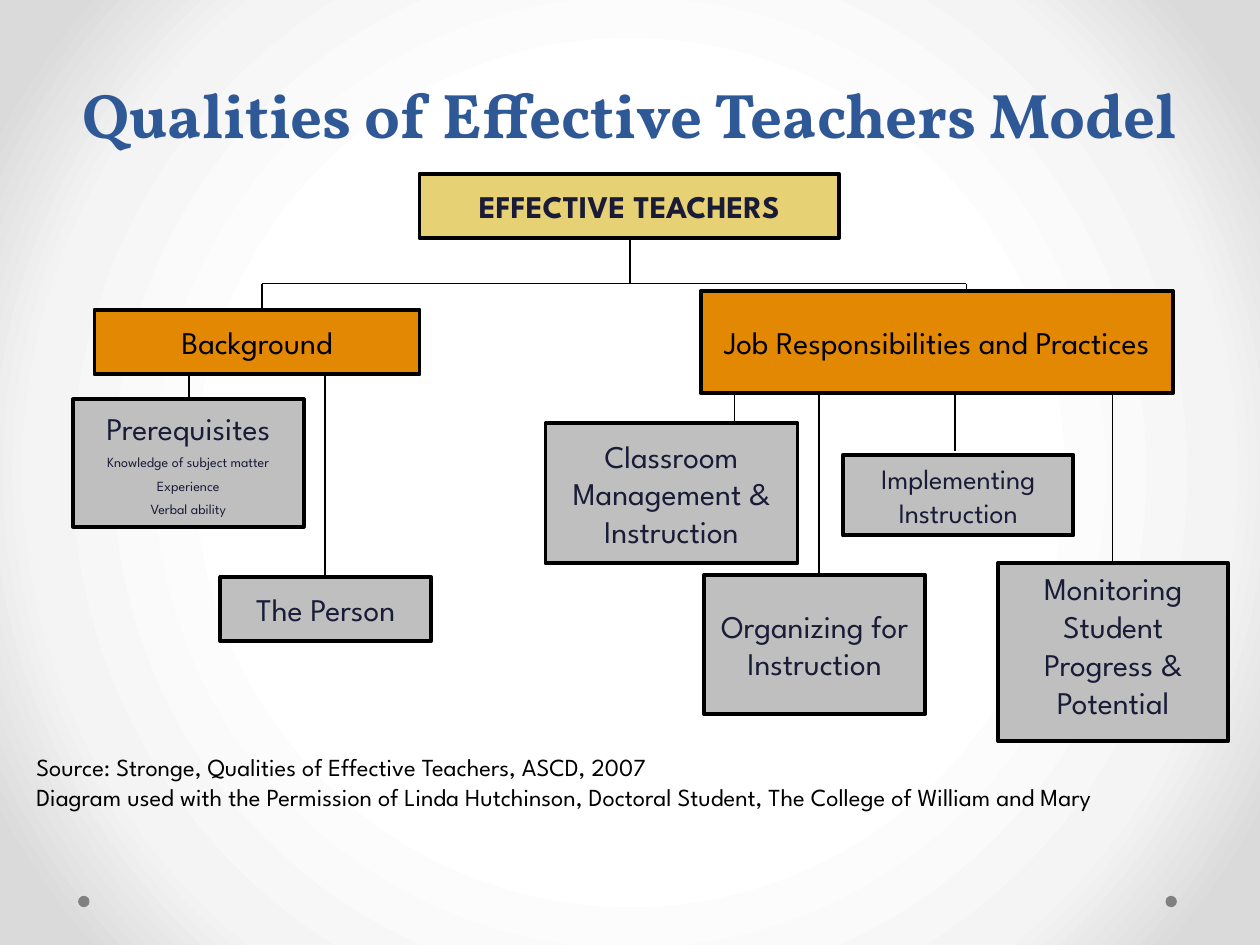
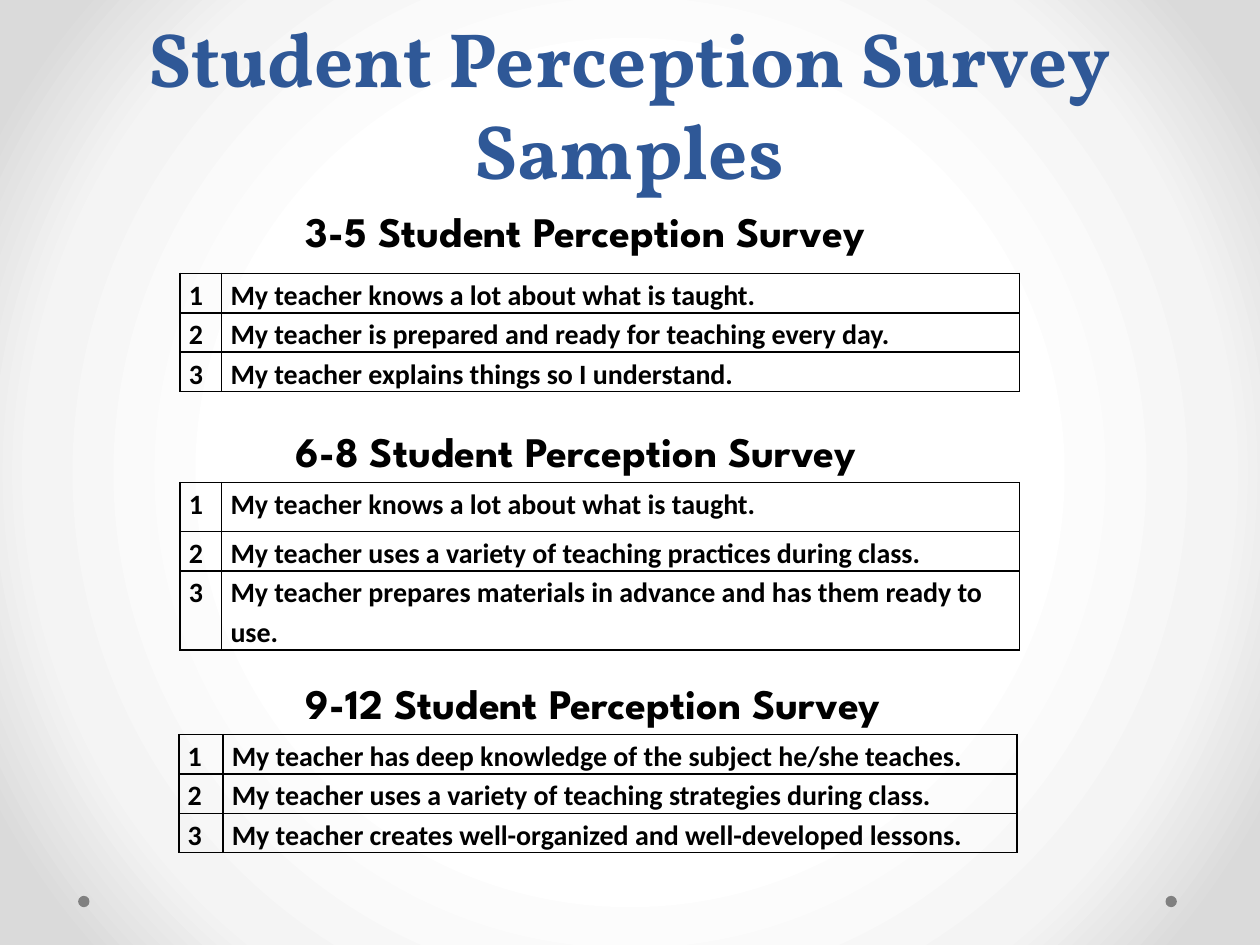
from dataclasses import dataclass
from typing import Any

from pptx import Presentation
from pptx.dml.color import RGBColor
from pptx.enum.shapes import MSO_CONNECTOR, MSO_SHAPE
from pptx.enum.text import MSO_ANCHOR, MSO_AUTO_SIZE, PP_ALIGN
from pptx.oxml import parse_xml
from pptx.oxml.ns import nsdecls
from pptx.util import Emu, Pt

EMU_PER_PX = 9144
BLACK, NAVY, BLUE = "000000", "191B37", "2F5897"
ORANGE, GOLD, SILVER, DOT_GRAY = "E38803", "E7D175", "BFBFBF", "808080"
BACKDROP_STOPS = ((50, "FFFFFF"), (76, "F4F4F4"), (92, "DADADA"))
DOT_LEFTS, DOT_TOP, DOT_SIZE = (925, 62), 711, 9
CELL_EDGES = ("lnL", "lnR", "lnT", "lnB")

TITLE_FONT = {"name": "Vollkorn", "bold": True}
BODY_FONT = {"name": "League Spartan", "bold": False}
CELL_FONT = {"name": "Calibri", "bold": True, "size": Pt(16)}
FRAME_FORMAT = {"word_wrap": True, "auto_size": MSO_AUTO_SIZE.NONE}
CELL_FORMAT = {"margin_left": 7, "margin_right": 7, "margin_top": 0, "margin_bottom": 0}
PLAIN_TABLE = {"first_row": False, "horz_banding": False}


@dataclass(frozen=True)
class Place:
    """Position and size in px."""
    left: int
    top: int
    width: int
    height: int


@dataclass(frozen=True)
class ModelBox:
    """One box of the teacher model."""
    label: str
    place: Place
    fill: str = SILVER
    ink: str = NAVY
    size: int = 18
    bold: bool = False
    anchor: MSO_ANCHOR = MSO_ANCHOR.MIDDLE
    details: tuple[str, ...] = ()


@dataclass(frozen=True)
class Survey:
    """One survey sample with its heading and statements."""
    grades: str
    heading: Place
    left: int
    top: int
    columns: tuple[int, int]
    rows: tuple[int, int, int]
    statements: tuple[str, str, str]


BRANCHES = (
    (258, 292, 258, 458),
    (208, 225, 767, 225),
    (500, 225, 500, 188),
    (208, 225, 208, 250),
    (767, 225, 767, 250),
    (150, 289, 150, 348),
    (883, 297, 883, 475),
    (758, 358, 758, 278),
    (650, 475, 650, 297),
    (583, 358, 583, 297),
)

MODEL_BOXES = (
    ModelBox("The Person", Place(175, 458, 167, 51)),
    ModelBox("Background", Place(75, 246, 258, 51), ORANGE, BLACK),
    ModelBox("Prerequisites", Place(58, 317, 183, 101),
             details=("Knowledge of subject matter", "Experience", "Verbal ability")),
    ModelBox("Classroom Management & Instruction", Place(433, 336, 200, 111)),
    ModelBox("Organizing for Instruction", Place(559, 456, 175, 111)),
    ModelBox("Implementing Instruction", Place(669, 361, 183, 64), size=16),
    ModelBox("Job Responsibilities and Practices", Place(556, 231, 375, 81), ORANGE, BLACK),
    ModelBox("EFFECTIVE TEACHERS", Place(333, 138, 333, 51), GOLD, bold=True),
    ModelBox("Monitoring Student Progress & Potential", Place(792, 447, 183, 141),
             anchor=MSO_ANCHOR.TOP),
)

SOURCE_LINES = (
    "Source: Stronge, Qualities of Effective Teachers, ASCD, 2007",
    "Diagram used with the Permission of Linda Hutchinson, Doctoral Student, "
    "The College of William and Mary",
)

SURVEYS = (
    Survey("3-5", Place(233, 158, 508, 50), 143, 217, (33, 633), (31, 31, 31),
           ("My teacher knows a lot about what is taught.",
            "My teacher is prepared and ready for teaching every day.",
            "My teacher explains things so I understand.")),
    Survey("6-8", Place(225, 333, 508, 50), 143, 383, (33, 633), (39, 31, 61),
           ("My teacher knows a lot about what is taught.",
            "My teacher uses a variety of teaching practices during class.",
            "My teacher prepares materials in advance and has them ready to use.")),
    Survey("9-12", Place(233, 533, 526, 50), 142, 583, (35, 630), (31, 31, 31),
           ("My teacher has deep knowledge of the subject he/she teaches.",
            "My teacher uses a variety of teaching strategies during class.",
            "My teacher creates well-organized and well-developed lessons.")),
)


def px(length: int) -> Emu:
    """Turn px into EMU."""
    return Emu(length * EMU_PER_PX)


def color(code: str) -> RGBColor:
    """Turn a hex string into a colour."""
    return RGBColor.from_string(code)


def assign(target: Any, values: dict[str, Any]) -> None:
    """Set each named attribute on the target."""
    for name, value in values.items():
        setattr(target, name, value)


def bounds(place: Place) -> tuple[Emu, Emu, Emu, Emu]:
    """Return a place in EMU."""
    return px(place.left), px(place.top), px(place.width), px(place.height)


def write(paragraph: Any, text: str, font: dict[str, Any], ink: str) -> None:
    """Fill a paragraph with one formatted run."""
    run = paragraph.add_run()
    run.text = text
    assign(run.font, font)
    run.font.color.rgb = color(ink)


def set_backdrop(master: Any) -> None:
    """Give the master the radial grey background."""
    stops = "".join(f'<a:gs pos="{at * 1000}"><a:srgbClr val="{code}"/></a:gs>'
                    for at, code in BACKDROP_STOPS)
    gradient = parse_xml(
        f'<a:gradFill {nsdecls("a")} rotWithShape="1"><a:gsLst>{stops}</a:gsLst>'
        '<a:path path="circle"><a:fillToRect l="50000" t="50000" r="50000" b="50000"/>'
        '</a:path></a:gradFill>')
    master.background.fill.solid()
    solid = master.element.xpath("p:cSld/p:bg/p:bgPr/a:solidFill")[0]
    solid.getparent().replace(solid, gradient)


def add_filled(slide: Any, preset: MSO_SHAPE, place: Place, fill: str) -> Any:
    """Add a flat shape without an outline."""
    shape = slide.shapes.add_shape(preset, *bounds(place))
    shape.shadow.inherit = False
    shape.fill.solid()
    shape.fill.fore_color.rgb = color(fill)
    shape.line.fill.background()
    return shape


def add_titled_slide(deck: Any, title: str, place: Place, size: int,
                     anchor: MSO_ANCHOR) -> Any:
    """Add a slide with its title and corner dots."""
    slide = deck.slides.add_slide(deck.slide_layouts.get_by_name("Title Only"))
    for left in DOT_LEFTS:
        add_filled(slide, MSO_SHAPE.OVAL, Place(left, DOT_TOP, DOT_SIZE, DOT_SIZE), DOT_GRAY)
    heading = slide.shapes.title
    assign(heading, dict(zip(("left", "top", "width", "height"), bounds(place))))
    assign(heading.text_frame, FRAME_FORMAT | {"vertical_anchor": anchor})
    paragraph = heading.text_frame.paragraphs[0]
    paragraph.alignment = PP_ALIGN.CENTER
    write(paragraph, title, TITLE_FONT | {"size": Pt(size)}, BLUE)
    return slide


def add_branch(slide: Any, ends: tuple[int, int, int, int]) -> None:
    """Draw one line of the model tree."""
    branch = slide.shapes.add_connector(MSO_CONNECTOR.STRAIGHT, *map(px, ends))
    branch.line.color.rgb = color(BLACK)
    branch.line.width = Pt(1)
    branch.element.spPr.append(parse_xml(f'<a:effectLst {nsdecls("a")}/>'))


def add_model_box(slide: Any, box: ModelBox) -> None:
    """Draw one outlined box with its label and details."""
    shape = add_filled(slide, MSO_SHAPE.RECTANGLE, box.place, box.fill)
    shape.line.color.rgb = color(BLACK)
    shape.line.width = Pt(2.25)
    frame = shape.text_frame
    assign(frame, FRAME_FORMAT | {"vertical_anchor": box.anchor})
    label = frame.paragraphs[0]
    label.alignment = PP_ALIGN.CENTER
    write(label, box.label, BODY_FONT | {"size": Pt(box.size), "bold": box.bold}, box.ink)
    for text in box.details:
        detail = frame.add_paragraph()
        assign(detail, {"alignment": PP_ALIGN.CENTER, "space_before": Pt(4)})
        write(detail, text, BODY_FONT | {"size": Pt(8)}, box.ink)


def add_note(slide: Any, place: Place, lines: tuple[str, ...], font: dict[str, Any],
             anchor: MSO_ANCHOR) -> None:
    """Add a left-aligned text box."""
    frame = slide.shapes.add_textbox(*bounds(place)).text_frame
    assign(frame, FRAME_FORMAT | {"vertical_anchor": anchor})
    for index, text in enumerate(lines):
        paragraph = frame.add_paragraph() if index else frame.paragraphs[0]
        write(paragraph, text, BODY_FONT | font, BLACK)


def fill_cell(cell: Any, text: str) -> None:
    """Write one bordered table cell."""
    assign(cell, {name: px(margin) for name, margin in CELL_FORMAT.items()})
    cell.fill.background()
    properties = cell._tc.get_or_add_tcPr()
    for index, edge in enumerate(CELL_EDGES):
        properties.insert(index, parse_xml(
            f'<a:{edge} {nsdecls("a")} w="{int(Pt(1))}"><a:solidFill>'
            f'<a:srgbClr val="{BLACK}"/></a:solidFill></a:{edge}>'))
    paragraph = cell.text_frame.paragraphs[0]
    paragraph.line_spacing = 1.15
    write(paragraph, text, CELL_FONT, BLACK)


def add_survey(slide: Any, survey: Survey) -> None:
    """Add a survey heading and its numbered statements."""
    place = Place(survey.left, survey.top, sum(survey.columns), sum(survey.rows))
    table = slide.shapes.add_table(len(survey.rows), len(survey.columns), *bounds(place)).table
    assign(table, PLAIN_TABLE)
    for column, width in zip(table.columns, survey.columns):
        column.width = px(width)
    for number, statement in enumerate(survey.statements, 1):
        row = table.rows[number - 1]
        row.height = px(survey.rows[number - 1])
        for cell, text in zip(row.cells, (str(number), statement)):
            fill_cell(cell, text)
    add_note(slide, survey.heading, (f"{survey.grades} Student Perception Survey",),
             {"size": Pt(24), "bold": True}, MSO_ANCHOR.MIDDLE)


def build_model_slide(deck: Any) -> None:
    """Build the teacher model diagram."""
    slide = add_titled_slide(deck, "Qualities of Effective Teachers Model",
                             Place(0, 42, 1000, 83), 36, MSO_ANCHOR.BOTTOM)
    slide.shapes.title.text_frame.paragraphs[0].line_spacing = Pt(58)
    add_note(slide, Place(19, 592, 908, 81), SOURCE_LINES, {"size": Pt(14)}, MSO_ANCHOR.TOP)
    for ends in BRANCHES:
        add_branch(slide, ends)
    for box in MODEL_BOXES:
        add_model_box(slide, box)


def build_survey_slide(deck: Any) -> None:
    """Build the survey samples."""
    slide = add_titled_slide(deck, "Student Perception Survey Samples",
                             Place(25, 3, 949, 125), 44, MSO_ANCHOR.TOP)
    for survey in SURVEYS:
        add_survey(slide, survey)


def main() -> None:
    """Build and save the deck."""
    deck = Presentation()
    assign(deck, {"slide_width": px(1000), "slide_height": px(750)})
    set_backdrop(deck.slide_master)
    build_model_slide(deck)
    build_survey_slide(deck)
    deck.save("out.pptx")


if __name__ == "__main__":
    main()
